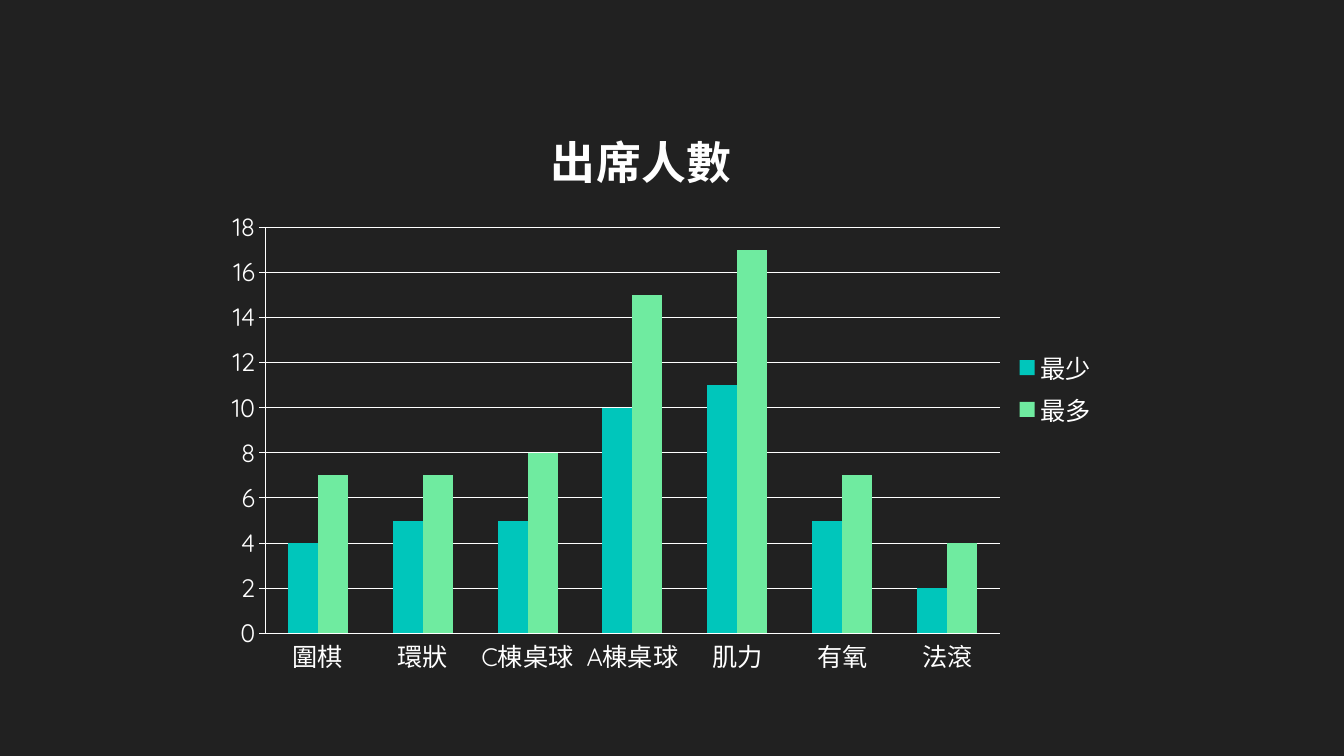
from lxml.etree import SubElement
from pptx import Presentation
from pptx.chart.data import CategoryChartData
from pptx.dml.color import RGBColor
from pptx.enum.chart import XL_CHART_TYPE, XL_LEGEND_POSITION, XL_TICK_MARK
from pptx.oxml.ns import qn
from pptx.util import Pt

TITLE = "出席人數"
ACTIVITIES = ["圍棋", "環狀", "C棟桌球", "A棟桌球", "肌力", "有氧", "法滾"]
ATTENDANCE = {
    "最少": [4, 5, 5, 10, 11, 5, 2],
    "最多": [7, 7, 8, 15, 17, 7, 4],
}
COLORS = {"background": "212121", "text": "FFFFFF", "最少": "00C6BB", "最多": "6FEBA0"}
BODY_FONT, TITLE_FONT = "Quicksand", "Noto Sans CJK SC"
CHART_BOX = (151, 64, 640, 427)
TITLE_LAYOUT = {"x": 0.37, "y": 0.04}
PLOT_LAYOUT = {"x": 0.06, "y": 0.23, "w": 0.82, "h": 0.68}


def color(name):
    return RGBColor.from_string(COLORS[name])


def style_font(font, name, size, bold=False):
    font.name = name
    font.size = Pt(size)
    font.bold = bold
    font.color.rgb = color("text")


def style_line(line):
    line.color.rgb = color("text")
    line.width = Pt(0.75)


def place(element, fractions, target=None):
    """Fix a chart part at fractions of the chart's width and height."""
    layout = element.find(qn("c:layout"))
    if layout is None:
        layout = SubElement(element, qn("c:layout"))
        element.insert(0, layout)
    manual = SubElement(layout, qn("c:manualLayout"))
    settings = {"layoutTarget": target} if target else {}
    settings.update(xMode="edge", yMode="edge")
    settings.update(fractions)
    for tag, value in settings.items():
        SubElement(manual, qn(f"c:{tag}")).set("val", str(value))


def add_attendance_chart(slide):
    data = CategoryChartData()
    data.categories = ACTIVITIES
    for name, values in ATTENDANCE.items():
        data.add_series(name, values)
    box = [Pt(length) for length in CHART_BOX]
    chart = slide.shapes.add_chart(XL_CHART_TYPE.COLUMN_CLUSTERED, *box, data).chart
    style_font(chart.font, BODY_FONT, 18)

    chart.has_title = True
    title_frame = chart.chart_title.text_frame
    title_frame.text = TITLE
    title_run = title_frame.paragraphs[0].runs[0]
    style_font(title_run.font, TITLE_FONT, 32, bold=True)
    SubElement(title_run.font._element, qn("a:ea")).set("typeface", TITLE_FONT)

    chart.has_legend = True
    chart.legend.position = XL_LEGEND_POSITION.RIGHT
    chart.legend.include_in_layout = False

    plot = chart.plots[0]
    plot.gap_width = 150
    plot.overlap = 0
    plot.vary_by_categories = False
    for series in plot.series:
        series.format.fill.solid()
        series.format.fill.fore_color.rgb = color(series.name)

    category_axis, value_axis = chart.category_axis, chart.value_axis
    category_axis.major_tick_mark = XL_TICK_MARK.NONE
    value_axis.major_tick_mark = XL_TICK_MARK.OUTSIDE
    value_axis.minimum_scale, value_axis.maximum_scale = 0, 18
    value_axis.major_unit = 2
    value_axis.has_major_gridlines = True
    for part in (category_axis, value_axis, value_axis.major_gridlines):
        style_line(part.format.line)

    chart_element = chart._chartSpace.find(qn("c:chart"))
    place(chart_element.find(qn("c:title")), TITLE_LAYOUT)
    place(chart_element.find(qn("c:plotArea")), PLOT_LAYOUT, target="inner")


def main():
    presentation = Presentation()
    presentation.slide_width, presentation.slide_height = Pt(960), Pt(540)
    slide = presentation.slides.add_slide(presentation.slide_layouts[6])
    slide.background.fill.solid()
    slide.background.fill.fore_color.rgb = color("background")
    add_attendance_chart(slide)
    presentation.save("out.pptx")


if __name__ == "__main__":
    main()
